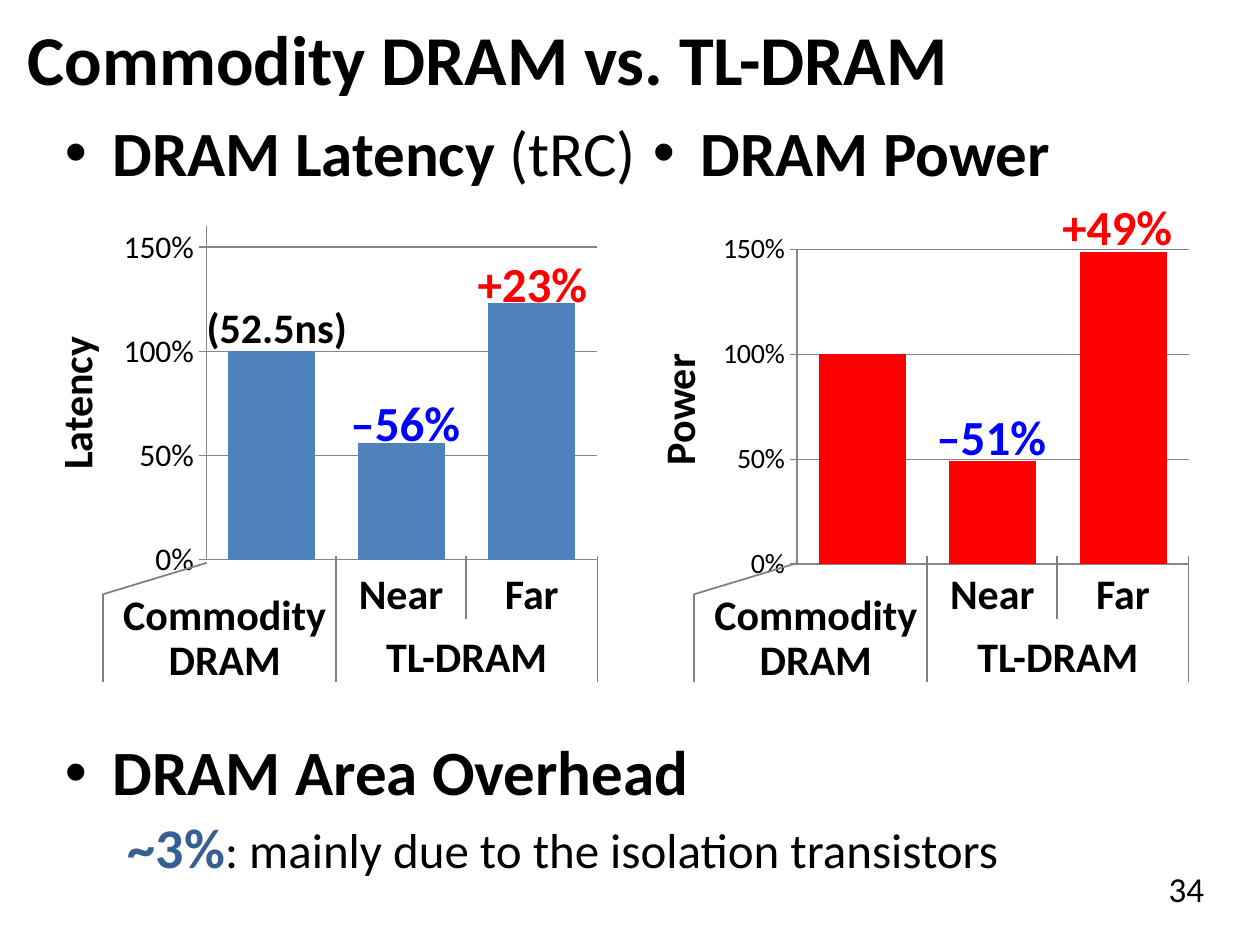
from dataclasses import dataclass

from lxml.etree import SubElement as Sub
from pptx import Presentation
from pptx.chart.data import CategoryChartData as Data
from pptx.dml.color import RGBColor as Rgb
from pptx.enum.chart import XL_CHART_TYPE as Kind, XL_TICK_MARK as Tick
from pptx.enum.shapes import MSO_CONNECTOR as Link
from pptx.enum.text import MSO_ANCHOR as Anchor, PP_ALIGN as Align
from pptx.oxml.ns import qn
from pptx.util import Inches, Pt


@dataclass(frozen=True)
class Theme:
    font: str = "Calibri"
    ink: str = "000000"
    red: str = "FF0000"
    blue: str = "0000FF"
    steel: str = "4F81BD"
    navy: str = "376092"
    line: str = "808080"
    grid: str = "868686"
    title: int = 40
    head: int = 36
    share: int = 32
    mark: int = 28
    label: int = 24
    page: int = 20


@dataclass(frozen=True)
class Panel:
    head: list
    shift: float
    chart: tuple
    side: tuple
    name: str
    vals: tuple
    color: str
    top: float
    size: int
    plot: tuple
    marks: list


T = Theme()
COLS, ROWS = 120, 90


def grid(n):
    return Inches(n * 10 / COLS)


def place(box, part):
    return (box[0] + part[0], box[1] + part[1], *part[2:])


def put(shapes, box, text, size=T.label, color=T.ink, bold=True, align=Align.LEFT,
        lead=0.9, mid=False, turn=0, inset=0.1, bullet=False, indent=0, before=0, frame=None):
    if frame is None:
        shape = shapes.add_textbox(*map(grid, box))
        shape.rotation = turn
        frame = shape.text_frame
        frame.word_wrap = True
        frame.margin_left = Inches(inset)
        frame.vertical_anchor = Anchor.MIDDLE if mid else Anchor.TOP
        para = frame.paragraphs[0]
    else:
        para = frame.add_paragraph()
    para.alignment = align
    para.line_spacing = lead
    para.space_before = Pt(before)
    prop = para._p.get_or_add_pPr()
    if bullet:
        prop.set("marL", str(Inches(0.38)))
        prop.set("indent", str(-Inches(0.38)))
        Sub(prop, qn("a:buFont")).set("typeface", "Arial")
        Sub(prop, qn("a:buChar")).set("char", "•")
    elif indent:
        prop.set("marL", str(Inches(indent)))
    base = dict(size=size, color=color, bold=bold)
    for part, form in [(text, {})] if isinstance(text, str) else text:
        form = base | form
        run = para.add_run()
        run.text = part
        run.font.name = T.font
        run.font.size = Pt(form["size"])
        run.font.bold = form["bold"]
        run.font.color.rgb = Rgb.from_string(form["color"])
    return frame


def rule(shapes, x1, y1, x2, y2):
    line = shapes.add_connector(Link.STRAIGHT, *map(grid, (x1, y1, x2, y2)))
    line.line.color.rgb = Rgb.from_string(T.line)
    line.line.width = Pt(1)
    Sub(line._element.spPr, qn("a:effectLst"))


def draw_chart(shapes, box, panel):
    data = Data(number_format="0%")
    data.categories = ["1", "2", "3"]
    data.add_series("Series 1", panel.vals)
    chart = shapes.add_chart(Kind.COLUMN_CLUSTERED, *map(grid, box), data).chart
    chart.has_title = False
    chart.has_legend = False
    chart.font.name = T.font
    chart.font.size = Pt(10)
    chart.font.color.rgb = Rgb.from_string(T.ink)
    chart.category_axis.visible = False
    axis = chart.value_axis
    axis.minimum_scale, axis.maximum_scale, axis.major_unit = 0, panel.top, 0.5
    axis.major_tick_mark = Tick.OUTSIDE
    axis.minor_tick_mark = Tick.NONE
    axis.tick_labels.number_format = "0%"
    axis.tick_labels.number_format_is_linked = False
    axis.tick_labels.font.size = Pt(panel.size)
    axis.has_major_gridlines = True
    for line in (axis.format.line, axis.major_gridlines.format.line):
        line.color.rgb = Rgb.from_string(T.grid)
        line.width = Pt(0.75)
    plot = chart.plots[0]
    plot.gap_width = 50
    plot.vary_by_categories = False
    fill = plot.series[0].format.fill
    fill.solid()
    fill.fore_color.rgb = Rgb.from_string(panel.color)
    area = chart._chartSpace.find(".//" + qn("c:plotArea"))
    for old in area.findall(qn("c:layout")):
        area.remove(old)
    layout = Sub(area, qn("c:layout"))
    area.insert(0, layout)
    manual = Sub(layout, qn("c:manualLayout"))
    keys = ("layoutTarget", "xMode", "yMode", "x", "y", "w", "h")
    for key, val in zip(keys, ("inner", "edge", "edge", *panel.plot)):
        Sub(manual, qn("c:" + key)).set("val", str(val))


def draw_names(shapes, box):
    x, y = box[:2]
    group = shapes.add_group_shape().shapes
    edge, near, far, end = 9.8, 32, 44.4, 56.9
    for col, low in ((near, 54), (far, 48), (end, 54)):
        rule(group, x + col, y + low, x + col, y + 42)
    rule(group, x + edge, y + 45.6, x + 19.7, y + 42.6)
    rule(group, x + edge, y + 54, x + edge, y + 45.6)
    names = (("Commodity DRAM", edge, 45, near + 1), ("Near", near, 43, far),
             ("Far", far, 43, end), ("TL-DRAM", near, 49, end))
    for text, left, row, right in names:
        put(group, place(box, (left, row, right - left, 9)), text, align=Align.CENTER)


def draw_panel(shapes, box, panel):
    draw_chart(shapes, place(box, panel.chart), panel)
    put(shapes, place(box, panel.side), panel.name, align=Align.CENTER,
        lead=1, mid=True, turn=270)
    put(shapes, place(box, (panel.shift, 0, 59, 13)), panel.head, size=T.head, bullet=True)
    draw_names(shapes, box)
    for text, col, row, size, color in panel.marks:
        put(shapes, place(box, (col, row, 18, 5)), text, size=size, color=color)


def draw_area(shapes, box):
    frame = put(shapes, box, "DRAM Area Overhead", size=T.head, bullet=True)
    put(shapes, box, [("~3%", dict(size=T.share, color=T.navy, bold=True)),
                      (": mainly due to the isolation transistors", {})],
        size=T.mark, bold=False, indent=0.5, before=6.4, frame=frame)


def main():
    deck = Presentation()
    deck.slide_width, deck.slide_height = grid(COLS), grid(ROWS)
    shapes = deck.slides.add_slide(deck.slide_layouts[6]).shapes
    put(shapes, (0, 0, COLS, 11), "Commodity DRAM vs. TL-DRAM", size=T.title,
        lead=1, mid=True, inset=0.22)
    delay = Panel([("DRAM Latency ", {}), ("(tRC)", dict(bold=False))], 5,
                  (0, 9, 59.2, 42), (-7.4, 24.3, 29.2, 6.2), "Latency",
                  (1, 0.56, 1.23), T.steel, 1.6, 18, (0.332, 0.037, 0.628, 0.756),
                  [("(52.5ns)", 18.5, 17.7, T.label, T.ink),
                   ("–56%", 32.2, 26.4, T.mark, T.blue),
                   ("+23%", 44.3, 13.2, T.mark, T.red)])
    power = Panel([("DRAM Power", {})], 4.7,
                  (0.7, 9, 58, 42), (-7.7, 23.6, 32, 8.8), "Power",
                  (1, 0.49, 1.49), T.red, 1.5, 16, (0.326, 0.09, 0.643, 0.713),
                  [("–51%", 31.7, 27.8, T.mark, T.blue),
                   ("+49%", 43.7, 7.8, T.mark, T.red)])
    for left, panel in ((56.3, power), (0, delay)):
        draw_panel(shapes, (left, 11, 60, 54), panel)
    draw_area(shapes, (5, 70, 105, 20))
    put(shapes, (106, 82, 14, 8), "34", size=T.page, bold=False, align=Align.CENTER, lead=1)
    deck.save("out.pptx")


if __name__ == "__main__":
    main()
